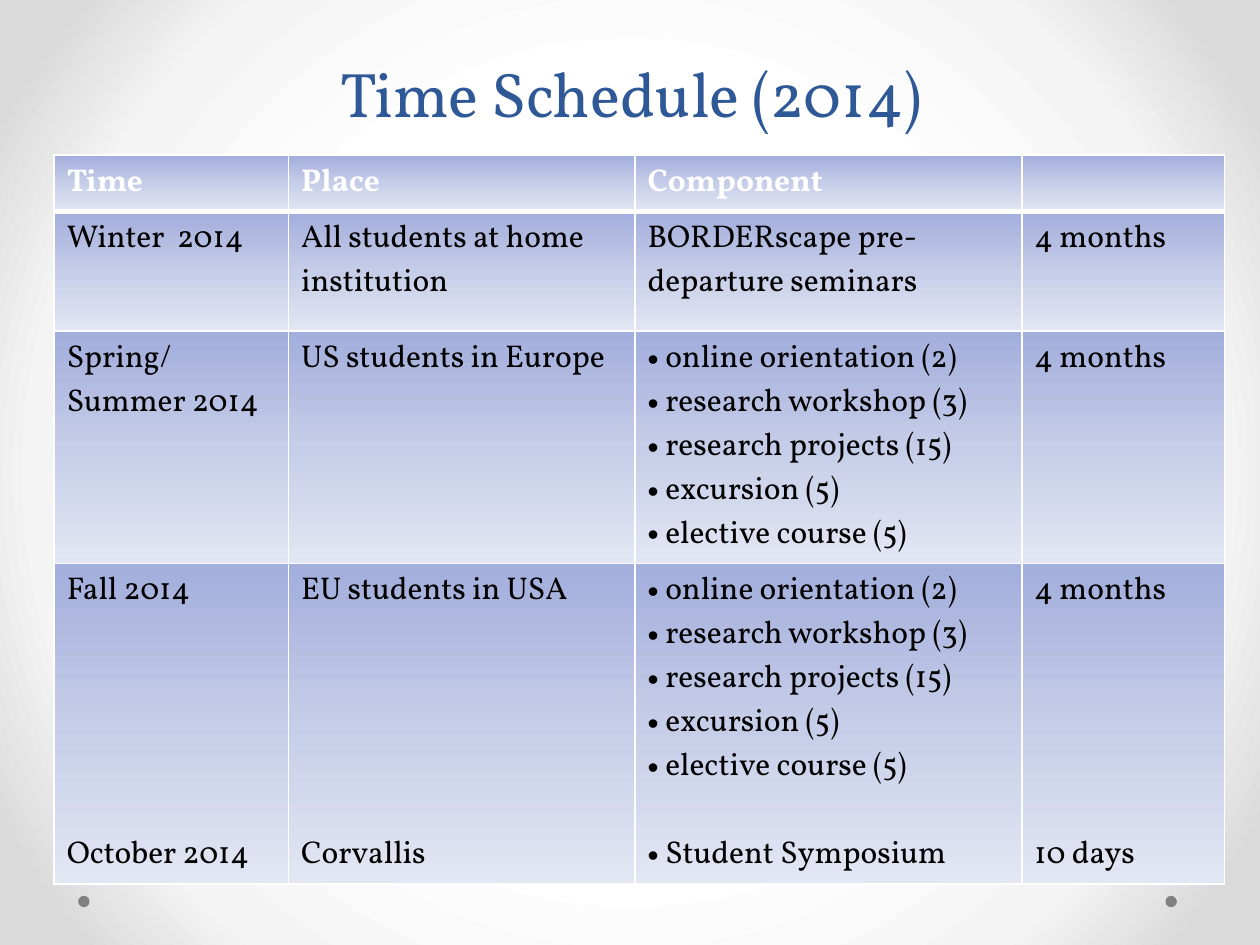
from lxml.etree import SubElement
from pptx import Presentation
from pptx.dml.color import RGBColor
from pptx.enum.shapes import MSO_SHAPE
from pptx.enum.text import MSO_ANCHOR, MSO_AUTO_SIZE, PP_ALIGN
from pptx.oxml.ns import qn
from pptx.util import Inches, Pt

FONT = "Vollkorn"
TITLE = "Time Schedule (2014)"
HEADINGS = ["Time", "Place", "Component", ""]
MODULES = [
    "online orientation (2)",
    "research workshop (3)",
    "research projects (15)",
    "excursion (5)",
    "elective course (5)",
]
SCHEDULE = [
    [["Winter  2014"], ["All students at home institution"],
     ["BORDERscape pre-departure seminars"], ["4 months"]],
    [["Spring/ Summer 2014"], ["US students in Europe"], MODULES, ["4 months"]],
    [["Fall 2014", "October 2014"], ["EU students in USA", "Corvallis"],
     MODULES + ["Student Symposium"], ["4 months", "10 days"]],
]
COLUMN_WIDTHS = [1.86, 2.75, 3.07, 1.61]
ROW_HEIGHTS = [0.44, 0.95, 1.84, 2.54]
CELL_STOPS = [(0, "A2AEDC"), (50, "C6CDE8"), (100, "E3E6F3")]
PAGE_STOPS = [(50, "FFFFFF"), (76, "F4F4F4"), (92, "DADADA")]
COMPONENT_COLUMN = 2
SYMPOSIUM_LINE = 6
LINE_POINTS = 25.15


def color(value):
    """Turn a hex string into a colour."""
    return RGBColor.from_string(value)


def add_node(parent, tag, **attributes):
    """Append an XML element with the given attributes."""
    return SubElement(parent, qn(tag), {key: str(value) for key, value in attributes.items()})


def add_gradient(parent, stops):
    """Append a gradient fill with its colour stops."""
    gradient = add_node(parent, "a:gradFill", rotWithShape=1)
    stop_list = add_node(gradient, "a:gsLst")
    for percent, value in stops:
        stop = add_node(stop_list, "a:gs", pos=percent * 1000)
        add_node(stop, "a:srgbClr", val=value)
    return gradient


def set_background(page):
    """Give the page a circular gradient."""
    page.background.fill.solid()
    properties = page.background._cSld.bg.bgPr
    properties.remove(properties[0])
    gradient = add_gradient(properties, PAGE_STOPS)
    circle = add_node(gradient, "a:path", path="circle")
    add_node(circle, "a:fillToRect", l=50000, t=50000, r=50000, b=50000)
    properties.insert(0, gradient)


def format_cell(cell, row):
    """Set the white borders and the gradient of a cell."""
    properties = cell._tc.get_or_add_tcPr()
    widths = {"L": 1, "R": 1, "T": 3 if row == 1 else 1, "B": 3 if row == 0 else 1}
    for side, width in widths.items():
        line = add_node(properties, f"a:ln{side}", w=Pt(width))
        add_node(add_node(line, "a:solidFill"), "a:srgbClr", val="FFFFFF")
    add_node(add_gradient(properties, CELL_STOPS), "a:lin", ang=5400000, scaled=0)


def add_bullet(para):
    """Give a paragraph a hanging round bullet."""
    properties = para._p.get_or_add_pPr()
    properties.set("marL", str(Inches(0.14)))
    properties.set("indent", str(-Inches(0.14)))
    add_node(properties, "a:buFont", typeface="Arial")
    add_node(properties, "a:buChar", char="•")


def write_cell(cell, lines, row, column):
    """Write the lines of a cell, with the symposium entries on one level."""
    cell.text = "\n".join(lines)
    for index, para in enumerate(cell.text_frame.paragraphs):
        para.font.name, para.font.size = FONT, Pt(18)
        para.font.bold = row == 0
        para.font.color.rgb = color("000000" if row else "FFFFFF")
        if row == len(SCHEDULE) and index and index == len(lines) - 1:
            para.space_before = Pt(LINE_POINTS * (SYMPOSIUM_LINE - index))
        if column == COMPONENT_COLUMN and len(lines) > 1:
            add_bullet(para)
    format_cell(cell, row)


def add_schedule(page):
    """Add the schedule table."""
    rows = [[[heading] for heading in HEADINGS]] + SCHEDULE
    frame = page.shapes.add_table(
        len(rows), len(HEADINGS), Inches(0.43), Inches(1.23),
        Inches(sum(COLUMN_WIDTHS)), Inches(sum(ROW_HEIGHTS)))
    table = frame.table
    table.first_row = table.horz_banding = False
    for column, width in zip(table.columns, COLUMN_WIDTHS):
        column.width = Inches(width)
    for table_row, height in zip(table.rows, ROW_HEIGHTS):
        table_row.height = Inches(height)
    for row, entries in enumerate(rows):
        for column, lines in enumerate(entries):
            write_cell(table.cell(row, column), lines, row, column)


def add_title(page):
    """Place and format the title."""
    title = page.shapes.title
    title.left, title.top = Inches(0.51), Inches(0.29)
    title.width, title.height = Inches(9), Inches(0.79)
    title.text = TITLE
    title.text_frame.auto_size = MSO_AUTO_SIZE.NONE
    title.text_frame.vertical_anchor = MSO_ANCHOR.BOTTOM
    para = title.text_frame.paragraphs[0]
    para.alignment = PP_ALIGN.CENTER
    para.line_spacing = Pt(58)
    para.font.name, para.font.size = FONT, Pt(36)
    para.font.color.rgb = color("2F5897")


def add_dots(page):
    """Add the two grey dots at the foot."""
    for left in (9.25, 0.62):
        dot = page.shapes.add_shape(
            MSO_SHAPE.OVAL, Inches(left), Inches(7.11), Inches(0.09), Inches(0.09))
        dot.shadow.inherit = False
        dot.fill.solid()
        dot.fill.fore_color.rgb = color("808080")
        dot.line.fill.background()


def main():
    """Build and save the slide."""
    deck = Presentation()
    deck.slide_width, deck.slide_height = Inches(10), Inches(7.5)
    page = deck.slides.add_slide(deck.slide_layouts[5])
    set_background(page)
    add_dots(page)
    add_title(page)
    add_schedule(page)
    deck.save("out.pptx")


if __name__ == "__main__":
    main()
